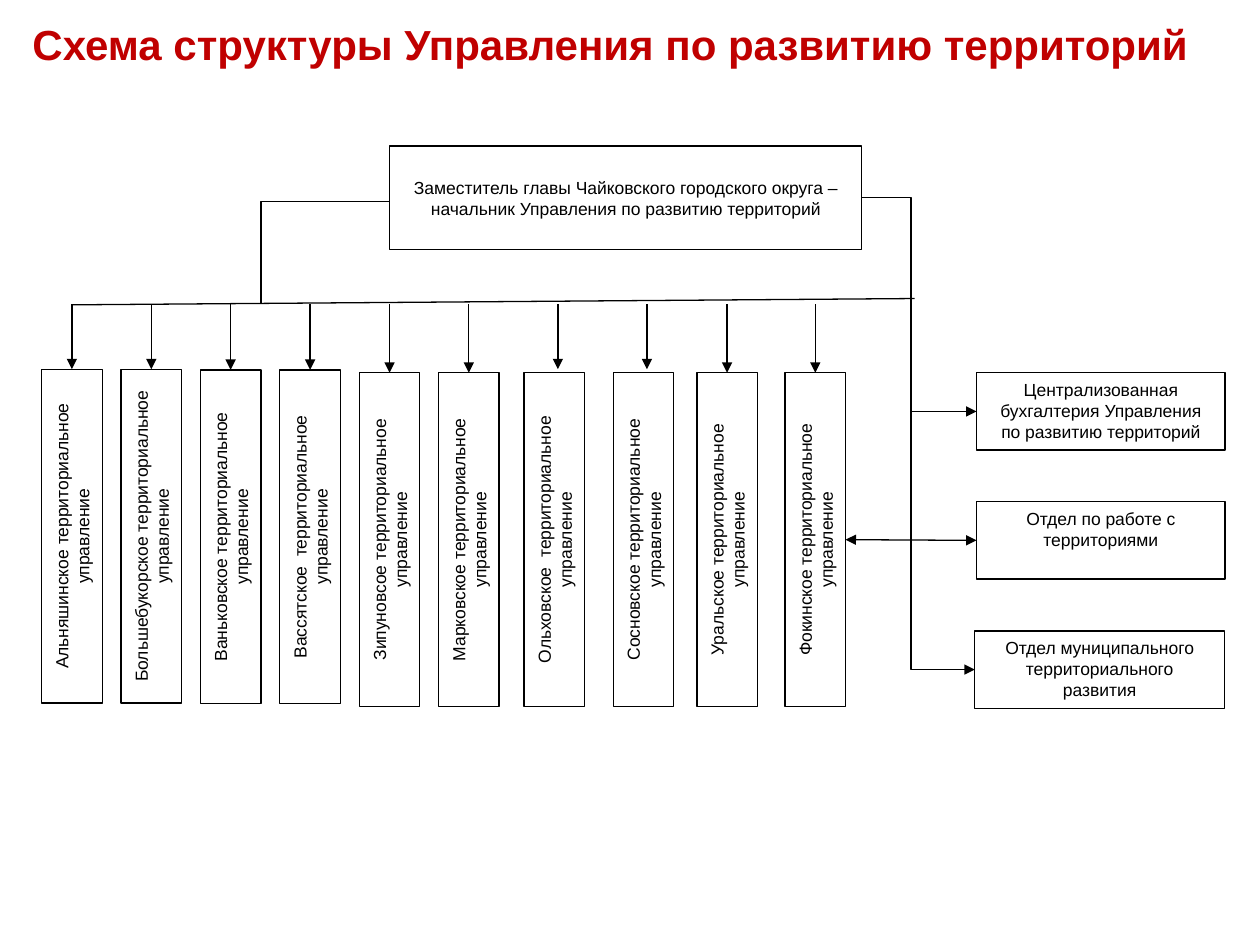
from lxml.etree import SubElement
from pptx import Presentation
from pptx.dml.color import RGBColor
from pptx.enum.shapes import MSO_CONNECTOR, MSO_SHAPE
from pptx.enum.text import MSO_ANCHOR, PP_ALIGN
from pptx.oxml.ns import qn
from pptx.util import Pt

TITLE = "Схема структуры Управления по развитию территорий"
HEAD = ("Заместитель главы Чайковского городского округа – "
        "начальник Управления по развитию территорий")
# Text, left, top, width
DEPARTMENTS = [
    ("Централизованная бухгалтерия Управления по развитию территорий", 558, 213, 142),
    ("Отдел по работе с территориями", 558, 286.7, 142),
    ("Отдел муниципального территориального развития", 557, 360.5, 142.7),
]
# Name, left, top, shift of the arrow from the middle of the box
TERRITORIES = [
    ("Альняшинское", 23.8, 211, 0),
    ("Большебукорское", 69.2, 211, 0),
    ("Ваньковское", 114.5, 211.4, 0),
    ("Вассятское ", 159.9, 211.4, 0),
    ("Зипуновсое", 205.3, 213, 0),
    ("Марковское", 250.6, 213, 0),
    ("Ольховское ", 299.5, 213, 2),
    ("Сосновское", 350.4, 213, 2),
    ("Уральское", 398.2, 213, 0),
    ("Фокинское", 448.6, 213, 0),
]
TERRITORY_WIDTH, TERRITORY_HEIGHT = 34.6, 190.8
DEPARTMENT_HEIGHT = 44.2
BUS_Y, ARROW_END_Y = 174, 211
TRUNK_X = 520.5


def color(value):
    return RGBColor.from_string(value)


def write(shape, text, size=10, bold=False, fill="000000",
          align=PP_ALIGN.CENTER, anchor=MSO_ANCHOR.MIDDLE):
    frame = shape.text_frame
    frame.word_wrap = True
    frame.vertical_anchor = anchor
    paragraph = frame.paragraphs[0]
    paragraph.alignment = align
    run = paragraph.add_run()
    run.text = text
    run.font.name = "Arial"
    run.font.size = Pt(size)
    run.font.bold = bold
    run.font.color.rgb = color(fill)


def add_box(slide, text, left, top, width, height, vertical=False, **text_format):
    shape = slide.shapes.add_shape(
        MSO_SHAPE.RECTANGLE, Pt(left), Pt(top), Pt(width), Pt(height))
    shape.shadow.inherit = False
    shape.fill.solid()
    shape.fill.fore_color.rgb = color("FFFFFF")
    shape.line.color.rgb = color("000000")
    shape.line.width = Pt(0.75)
    write(shape, text, **text_format)
    if vertical:
        shape.text_frame._txBody.bodyPr.set("vert", "vert270")
    return shape


def add_line(slide, start, end, arrows=(), bend=None, rotation=0):
    """Draw a line; arrows holds "headEnd" (start) and "tailEnd" (end), bend is a share."""
    kind = MSO_CONNECTOR.STRAIGHT if bend is None else MSO_CONNECTOR.ELBOW
    connector = slide.shapes.add_connector(kind, *(Pt(value) for value in start + end))
    connector.line.color.rgb = color("000000")
    connector.line.width = Pt(0.75)
    properties = connector._element.spPr
    for arrow in arrows:
        SubElement(properties.find(qn("a:ln")), qn(f"a:{arrow}"), type="triangle")
    SubElement(properties, qn("a:effectLst"))
    if bend is not None:
        adjustments = properties.find(qn("a:prstGeom")).find(qn("a:avLst"))
        SubElement(adjustments, qn("a:gd"), name="adj1", fmla=f"val {round(bend * 100000)}")
    if rotation:
        properties.find(qn("a:xfrm")).set("rot", str(rotation * 60000))
    return connector


def main():
    presentation = Presentation()
    presentation.slide_width, presentation.slide_height = Pt(720), Pt(540)
    slide = presentation.slides.add_slide(presentation.slide_layouts[6])

    title = slide.shapes.add_textbox(Pt(11.5), Pt(7.2), Pt(689), Pt(36))
    write(title, TITLE, size=24, bold=True, fill="C00000", align=PP_ALIGN.LEFT)

    head = add_box(slide, HEAD, 222.5, 83.5, 270, 59)
    departments = [
        add_box(slide, text, left, top, width, DEPARTMENT_HEIGHT, anchor=MSO_ANCHOR.TOP)
        for text, left, top, width in DEPARTMENTS
    ]
    territories = [
        add_box(slide, f"{name} территориальное управление", left, top,
                TERRITORY_WIDTH, TERRITORY_HEIGHT, vertical=True)
        for name, left, top, _ in TERRITORIES
    ]

    add_line(slide, (41, 174.2), (522.7, 170.6))
    for box, (_, left, _, shift) in zip(territories, TERRITORIES):
        x = left + TERRITORY_WIDTH / 2 + shift
        arrow = add_line(slide, (x, BUS_Y), (x, ARROW_END_Y), ["tailEnd"])
        if not shift:
            arrow.end_connect(box, 0)

    add_line(slide, (150.8, 101.9), (220.7, 175.3), bend=0.167, rotation=90)

    accounting, territory_work, development = departments
    trunk = add_line(slide, (492.5, 113), (557, 382.6), ["tailEnd"], bend=0.435)
    trunk.begin_connect(head, 3)
    trunk.end_connect(development, 1)

    branch = add_line(slide, (TRUNK_X, 235.1), (558, 235.1), ["tailEnd"])
    branch.end_connect(accounting, 1)

    exchange = add_line(slide, (483.2, 308.4), (558, 308.8), ["headEnd", "tailEnd"])
    exchange.begin_connect(territories[-1], 3)
    exchange.end_connect(territory_work, 1)

    presentation.save("out.pptx")


if __name__ == "__main__":
    main()
